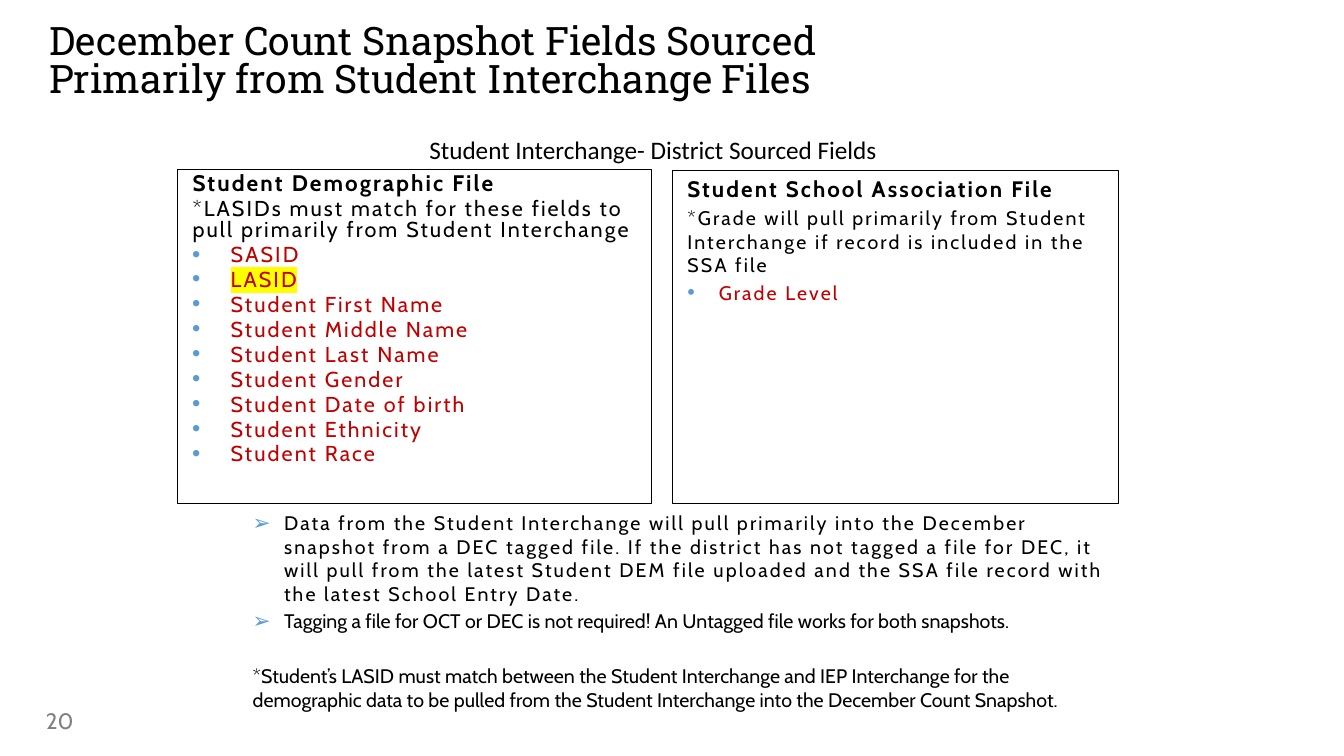
from dataclasses import dataclass
from typing import Optional

from lxml import etree
from pptx import Presentation
from pptx import util as u
from pptx.dml.color import RGBColor
from pptx.enum import text as t
from pptx.oxml.ns import qn

BLACK, RED, GREY, BLUE, YELLOW = "000000", "C00000", "808080", "5B9BD5", "FFFF00"


@dataclass
class Area:
    left: float
    top: float
    width: float
    height: float


@dataclass
class Line:
    text: str
    size: float = 14
    font: str = "Cabin"
    color: str = BLACK
    bold: bool = False
    spacing: float = 0
    highlight: Optional[str] = None
    bullet: Optional[str] = None
    margin: float = 0
    hanging: float = 0
    line_spacing: float = 1.0
    before: float = 0
    align: t.PP_ALIGN = t.PP_ALIGN.LEFT


def rgb(color: str) -> RGBColor:
    return RGBColor.from_string(color)


def place(shape, area: Area) -> None:
    shape.left, shape.top = u.Cm(area.left), u.Cm(area.top)
    shape.width, shape.height = u.Cm(area.width), u.Cm(area.height)


def set_bullet(paragraph, line: Line) -> None:
    props = paragraph._p.get_or_add_pPr()
    props.set("marL", str(u.Cm(line.margin)))
    props.set("indent", str(-u.Cm(line.hanging)))
    if not line.bullet:
        etree.SubElement(props, qn("a:buNone"))
        return
    color = etree.SubElement(props, qn("a:buClr"))
    etree.SubElement(color, qn("a:srgbClr"), val=BLUE)
    etree.SubElement(props, qn("a:buSzPct"), val="110000")
    etree.SubElement(props, qn("a:buFont"), typeface="Arial")
    etree.SubElement(props, qn("a:buChar"), char=line.bullet)


def write_line(paragraph, text: str, **style) -> None:
    line = Line(text, **style)
    set_bullet(paragraph, line)
    paragraph.alignment = line.align
    paragraph.line_spacing = line.line_spacing
    paragraph.space_before = u.Pt(line.before)
    paragraph.space_after = u.Pt(0)
    run = paragraph.add_run()
    run.text = line.text
    run.font.name, run.font.size, run.font.bold = line.font, u.Pt(line.size), line.bold
    run.font.color.rgb = rgb(line.color)
    props = run._r.get_or_add_rPr()
    if line.spacing:
        props.set("spc", str(int(line.spacing * 100)))
    if line.highlight:
        mark = etree.Element(qn("a:highlight"))
        etree.SubElement(mark, qn("a:srgbClr"), val=line.highlight)
        props.find(qn("a:solidFill")).addnext(mark)


def fill_frame(shape, entries: list[tuple[str, dict]], anchor=t.MSO_ANCHOR.TOP) -> None:
    frame = shape.text_frame
    frame.word_wrap = True
    frame.auto_size = t.MSO_AUTO_SIZE.NONE
    frame.vertical_anchor = anchor
    for index, (text, style) in enumerate(entries):
        paragraph = frame.add_paragraph() if index else frame.paragraphs[0]
        write_line(paragraph, text, **style)


def add_panel(panel, area: Area, entries: list[tuple[str, dict]]) -> None:
    place(panel, area)
    panel.line.color.rgb = rgb(BLACK)
    panel.line.width = u.Pt(0.75)
    fill_frame(panel, entries)


def add_text(slide, area: Area, entries: list[tuple[str, dict]], anchor=t.MSO_ANCHOR.TOP) -> None:
    box = slide.shapes.add_textbox(0, 0, 0, 0)
    place(box, area)
    fill_frame(box, entries, anchor)


def main() -> None:
    deck = Presentation()
    deck.slide_width, deck.slide_height = u.Cm(33.87), u.Cm(19.05)
    slide = deck.slides.add_slide(deck.slide_layouts[3])
    title, demographic, association = slide.placeholders

    place(title, Area(1.24, 0.62, 22.4, 2.49))
    fill_frame(title, [(
        "December Count Snapshot Fields Sourced Primarily from Student Interchange Files",
        dict(size=28, font="Roboto Slab", line_spacing=0.81),
    )])
    frame = title.text_frame
    frame.margin_left = frame.margin_right = frame.margin_top = frame.margin_bottom = 0

    add_text(slide, Area(5.59, 3.25, 21.74, 1.02), [(
        "Student Interchange- District Sourced Fields",
        dict(size=18, font="Calibri", align=t.PP_ALIGN.CENTER),
    )])

    plain = dict(margin=0.13, spacing=1.5)
    compact = dict(size=15.4, spacing=1.5, line_spacing=0.8, before=3)
    field = compact | dict(color=RED, bullet="•", margin=1.09, hanging=0.97)
    fields = ["SASID", "LASID", "Student First Name", "Student Middle Name",
              "Student Last Name", "Student Gender", "Student Date of birth",
              "Student Ethnicity", "Student Race"]
    add_panel(demographic, Area(4.47, 4.27, 11.96, 8.43), [
        ("Student Demographic File", plain | dict(size=16.1, bold=True, line_spacing=0.8)),
        ("*LASIDs must match for these fields to pull primarily from Student Interchange",
         plain | compact),
        *((name, field | dict(highlight=YELLOW if name == "LASID" else None))
          for name in fields),
    ])

    item = dict(margin=0.92, hanging=0.79, before=2.8)
    add_panel(association, Area(16.94, 4.29, 11.25, 8.41), [
        ("Student School Association File", plain | dict(size=16, bold=True)),
        ("*Grade will pull primarily from Student Interchange if record is included "
         "in the SSA file", plain | dict(before=2.8)),
        ("Grade Level", item | dict(color=RED, bullet="•", spacing=1.5)),
    ])

    note = item | dict(bullet="➢")
    add_text(slide, Area(5.99, 12.75, 22.43, 6.22), [
        ("Data from the Student Interchange will pull primarily into the December snapshot "
         "from a DEC tagged file. If the district has not tagged a file for DEC, it will pull "
         "from the latest Student DEM file uploaded and the SSA file record with the latest "
         "School Entry Date.", note | dict(before=0, spacing=1.5)),
        ("Tagging a file for OCT or DEC is not required! An Untagged file works for both "
         "snapshots.", note),
        ("*Student’s LASID must match between the Student Interchange and IEP Interchange "
         "for the demographic data to be pulled from the Student Interchange into the "
         "December Count Snapshot.", dict(margin=0.13, before=22.5)),
    ])

    add_text(slide, Area(0.91, 17.65, 7.62, 1.02),
             [("20", dict(size=16, color=GREY))], t.MSO_ANCHOR.MIDDLE)
    deck.save("out.pptx")


if __name__ == "__main__":
    main()
